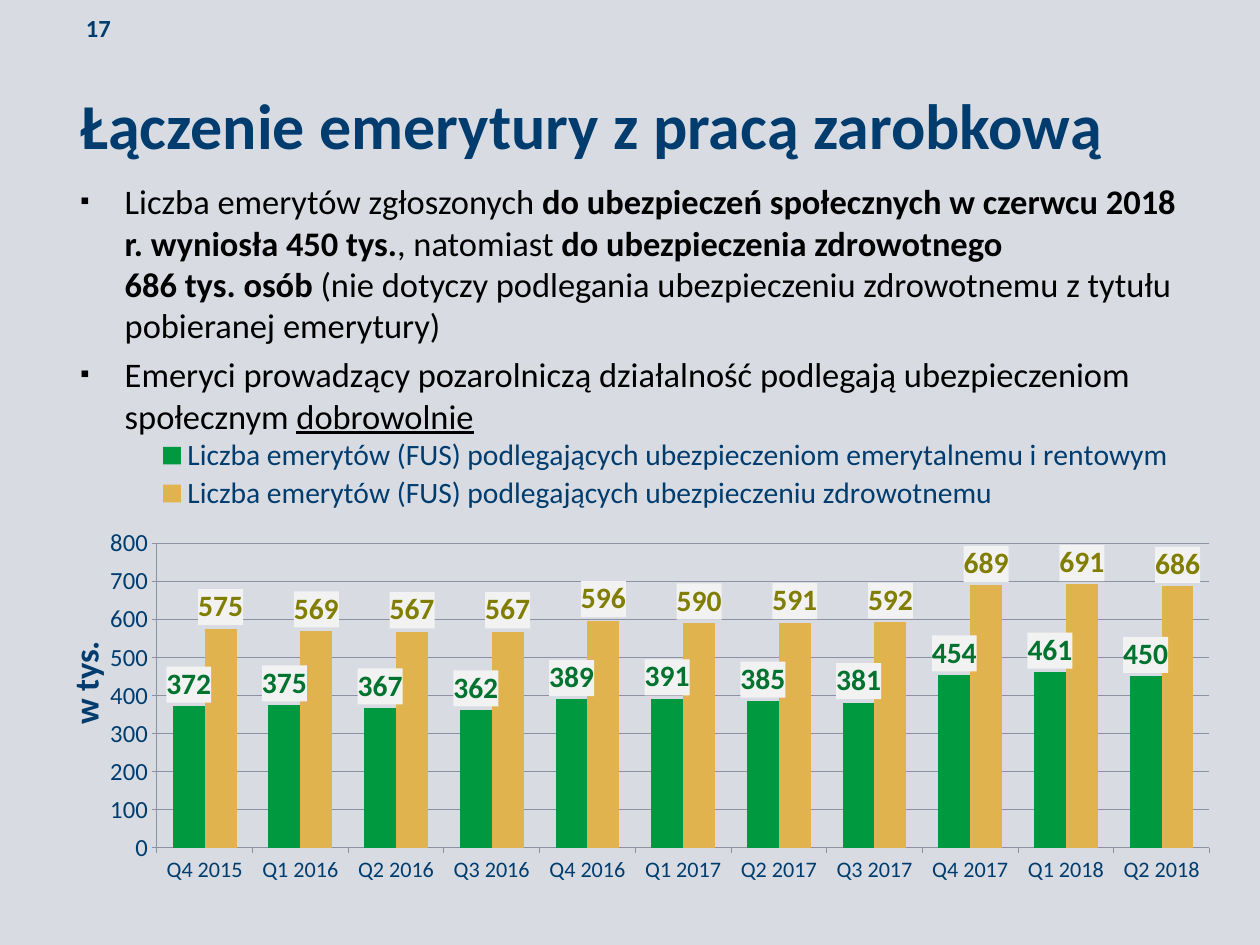
from lxml import etree
from pptx import Presentation
from pptx.chart.data import CategoryChartData
from pptx.dml.color import RGBColor
from pptx.enum.chart import XL_CHART_TYPE, XL_LABEL_POSITION, XL_LEGEND_POSITION, XL_TICK_MARK
from pptx.enum.text import MSO_ANCHOR
from pptx.oxml import parse_xml
from pptx.oxml.ns import nsdecls, qn
from pptx.util import Inches, Pt

BACKGROUND = RGBColor(0xD8, 0xDB, 0xE2)
NAVY = RGBColor(0x00, 0x3D, 0x6E)
BLACK = RGBColor(0x00, 0x00, 0x00)
GRID = RGBColor(0x8C, 0x92, 0xA3)
GREEN = RGBColor(0x00, 0x99, 0x3F)
DARK_GREEN = RGBColor(0x00, 0x73, 0x2F)
GOLD = RGBColor(0xE1, 0xB3, 0x4F)
OLIVE = RGBColor(0x81, 0x7E, 0x01)
LABEL_FILL = RGBColor(0xF2, 0xF2, 0xF2)
FONT = "Calibri"

# Each run: text, bold, underlined
BULLETS = [
    [("Liczba emerytów zgłoszonych ", False, False),
     ("do ubezpieczeń społecznych w czerwcu 2018 r. wyniosła 450 tys.", True, False),
     (", natomiast ", False, False),
     ("do ubezpieczenia zdrowotnego \n686 tys. osób ", True, False),
     ("(nie dotyczy podlegania ubezpieczeniu zdrowotnemu z tytułu pobieranej emerytury)",
      False, False)],
    [("Emeryci prowadzący pozarolniczą działalność podlegają ubezpieczeniom społecznym ",
      False, False),
     ("dobrowolnie", False, True)],
]
QUARTERS = ["Q4 2015"] + [f"Q{q} {year}" for year in (2016, 2017) for q in range(1, 5)]
QUARTERS += ["Q1 2018", "Q2 2018"]
# Each series: name, values, bar colour, label colour
SERIES = [
    ("Liczba emerytów (FUS) podlegających ubezpieczeniom emerytalnemu i rentowym",
     [372, 375, 367, 362, 389, 391, 385, 381, 454, 461, 450], GREEN, DARK_GREEN),
    ("Liczba emerytów (FUS) podlegających ubezpieczeniu zdrowotnemu",
     [575, 569, 567, 567, 596, 590, 591, 592, 689, 691, 686], GOLD, OLIVE),
]


def set_font(font, size, color, bold=False):
    font.name, font.size, font.bold = FONT, Pt(size), bold
    font.color.rgb = color


def add_text_frame(s, box, anchor):
    tf = s.shapes.add_textbox(*map(Inches, box)).text_frame
    tf.word_wrap = True
    tf.vertical_anchor = anchor
    return tf


def add_heading(s, box, text, size, anchor=MSO_ANCHOR.TOP, inset=None):
    tf = add_text_frame(s, box, anchor)
    if inset is not None:
        tf.margin_left = tf.margin_right = tf.margin_top = tf.margin_bottom = Inches(inset)
    p = tf.paragraphs[0]
    p.text = text
    set_font(p.font, size, NAVY, True)


def add_bullets(s, box):
    tf = add_text_frame(s, box, MSO_ANCHOR.MIDDLE)
    for i, runs in enumerate(BULLETS):
        p = tf.add_paragraph() if i else tf.paragraphs[0]
        p.space_before, p.space_after = Pt(0 if i else 18), Pt(6)
        set_font(p.font, 28, BLACK)
        pPr = p._p.get_or_add_pPr()
        pPr.set("marL", str(Inches(0.5)))
        pPr.set("indent", str(Inches(-0.5)))
        default_font = pPr.find(qn("a:defRPr"))
        for tag, name, value in (("buSzPct", "val", "75000"), ("buFont", "typeface", FONT),
                                 ("buChar", "char", "▪")):
            bullet = etree.Element(qn(f"a:{tag}"))
            bullet.set(name, value)
            default_font.addprevious(bullet)
        for text, bold, underline in runs:
            for j, line in enumerate(text.split("\n")):
                if j:
                    p.add_line_break()
                r = p.add_run()
                r.text = line
                set_font(r.font, 28, BLACK, bold)
                r.font.underline = underline


def set_layout(parent, after, x, y, w=None, h=None, inner=False):
    """Place a chart part by fractions of the chart, following the child named after."""
    for old in parent.findall(qn("c:layout")):
        parent.remove(old)
    parts = '<c:layoutTarget val="inner"/>' if inner else ""
    parts += '<c:xMode val="edge"/><c:yMode val="edge"/>'
    parts += "".join(f'<c:{k} val="{v}"/>' for k, v in zip("xywh", (x, y, w, h))
                     if v is not None)
    layout = parse_xml(f'<c:layout {nsdecls("c")}><c:manualLayout>{parts}'
                       '</c:manualLayout></c:layout>')
    if after:
        parent.find(qn(after)).addnext(layout)
    else:
        parent.insert(0, layout)


def format_series(series, color, label_color):
    series.format.fill.solid()
    series.format.fill.fore_color.rgb = color
    labels = series.data_labels
    labels.show_value = True
    labels.number_format, labels.number_format_is_linked = "#,##0", False
    labels.position = XL_LABEL_POSITION.OUTSIDE_END
    set_font(labels.font, 24, label_color, True)
    labels._element.find(qn("c:numFmt")).addnext(parse_xml(
        f'<c:spPr {nsdecls("c", "a")}><a:solidFill><a:srgbClr val="{LABEL_FILL}"/>'
        '</a:solidFill></c:spPr>'))


def format_axis(axis, size):
    set_font(axis.tick_labels.font, size, NAVY)
    axis.major_tick_mark, axis.minor_tick_mark = XL_TICK_MARK.OUTSIDE, XL_TICK_MARK.NONE
    axis.format.line.color.rgb = GRID
    axis.format.line.width = Pt(0.75)


def add_pensioner_chart(s, box):
    data = CategoryChartData(number_format="#,##0")
    data.categories = QUARTERS
    for name, values, _, _ in SERIES:
        data.add_series(name, values)
    chart = s.shapes.add_chart(XL_CHART_TYPE.COLUMN_CLUSTERED, *map(Inches, box), data).chart
    set_font(chart.font, 18, NAVY)
    chart.has_title = False
    plot = chart.plots[0]
    plot.gap_width, plot.overlap, plot.vary_by_categories = 100, 0, False
    for series, (_, _, color, label_color) in zip(plot.series, SERIES):
        format_series(series, color, label_color)

    format_axis(chart.category_axis, 18)
    axis = chart.value_axis
    format_axis(axis, 20)
    axis.minimum_scale, axis.maximum_scale, axis.major_unit = 0, 800, 100
    axis.tick_labels.number_format = "#,##0"
    axis.tick_labels.number_format_is_linked = False
    axis.major_gridlines.format.line.color.rgb = GRID
    axis.major_gridlines.format.line.width = Pt(0.75)
    tf = axis.axis_title.text_frame
    tf.text = "w tys."
    set_font(tf.paragraphs[0].font, 28, NAVY, True)
    tf._txBody.find(qn("a:bodyPr")).set("rot", "-5400000")
    tf._txBody.find(qn("a:bodyPr")).set("vert", "horz")
    set_layout(axis.axis_title._element, "c:tx", 0.01, 0.41)

    chart.has_legend = True
    legend = chart.legend
    legend.position, legend.include_in_layout = XL_LEGEND_POSITION.RIGHT, False
    set_font(legend.font, 24, NAVY)
    set_layout(legend._element, "c:legendPos", 0.09, 0.0, 0.88, 0.16)
    set_layout(chart._chartSpace.chart.plotArea, None, 0.096, 0.221, 0.898, 0.628, True)


def main():
    prs = Presentation()
    prs.slide_width, prs.slide_height = Inches(14.22), Inches(10.67)
    s = prs.slides.add_slide(prs.slide_layouts[6])
    s.background.fill.solid()
    s.background.fill.fore_color.rgb = BACKGROUND
    add_heading(s, (0.91, 0.09, 0.85, 0.45), "17", 20, MSO_ANCHOR.MIDDLE, 0.06)
    add_heading(s, (0.81, 0.92, 12.6, 0.94), "Łączenie emerytury z pracą zarobkową", 52)
    add_bullets(s, (0.81, 2.18, 12.6, 2.6))
    add_pensioner_chart(s, (0.5, 4.92, 13.23, 5.48))
    prs.save("out.pptx")


if __name__ == "__main__":
    main()
